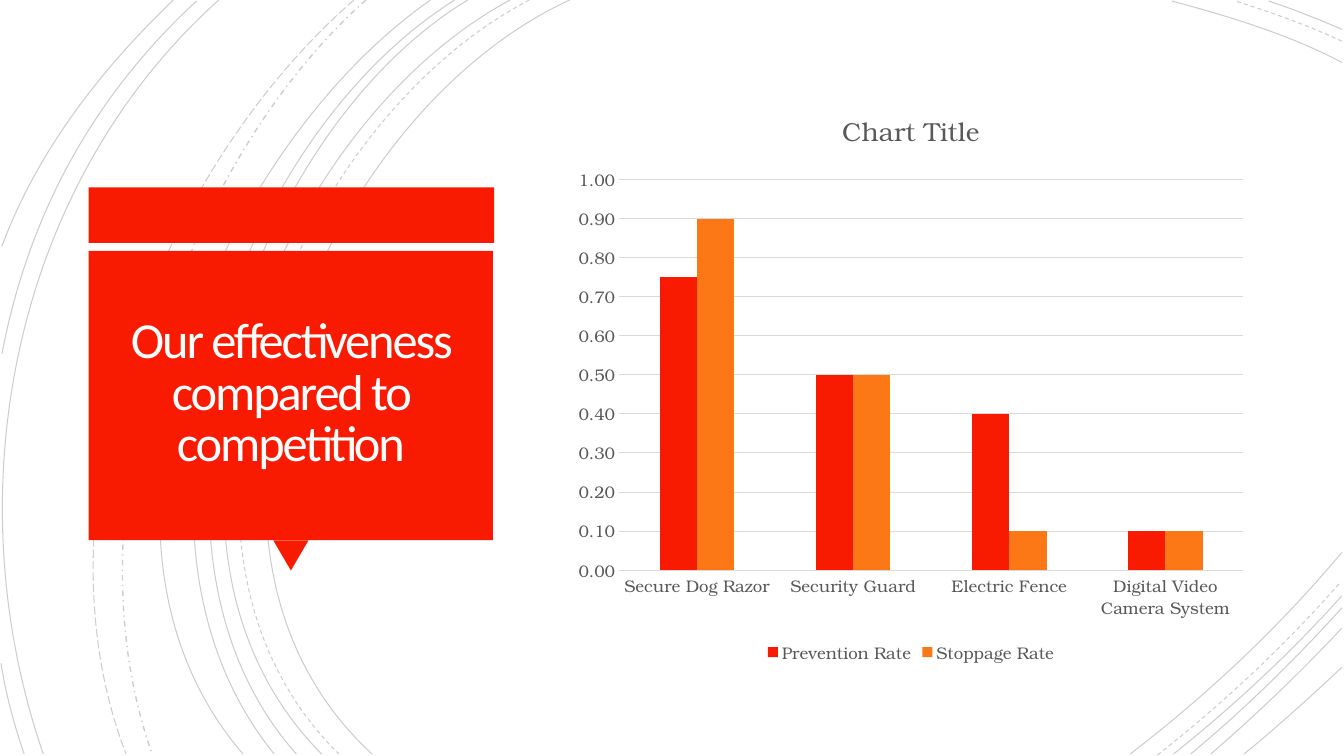
from dataclasses import dataclass

from lxml import etree
from pptx import Presentation
from pptx.chart.data import CategoryChartData
from pptx.dml.color import RGBColor
from pptx.enum.chart import XL_CHART_TYPE, XL_LEGEND_POSITION, XL_TICK_MARK
from pptx.enum.dml import MSO_LINE
from pptx.enum.shapes import MSO_SHAPE
from pptx.enum.text import MSO_ANCHOR, MSO_AUTO_SIZE, PP_ALIGN
from pptx.oxml.ns import qn
from pptx.util import Inches, Pt

COLUMNS = XL_CHART_TYPE.COLUMN_CLUSTERED
LEGEND_BOTTOM = XL_LEGEND_POSITION.BOTTOM
NO_TICKS = XL_TICK_MARK.NONE
SOLID, DASH = MSO_LINE.SOLID, MSO_LINE.DASH
DASH_DOT, LONG_DASH = MSO_LINE.DASH_DOT, MSO_LINE.LONG_DASH
RECTANGLE, TRIANGLE = MSO_SHAPE.RECTANGLE, MSO_SHAPE.ISOSCELES_TRIANGLE
MIDDLE, CENTER = MSO_ANCHOR.MIDDLE, PP_ALIGN.CENTER
NO_AUTOFIT = MSO_AUTO_SIZE.NONE


@dataclass(frozen=True)
class Theme:
    red: RGBColor = RGBColor(0xF8, 0x1B, 0x02)
    orange: RGBColor = RGBColor(0xFC, 0x77, 0x15)
    white: RGBColor = RGBColor(0xFF, 0xFE, 0xFF)
    black: RGBColor = RGBColor(0, 0, 0)
    gray: RGBColor = RGBColor(0x59, 0x59, 0x59)
    grid: RGBColor = RGBColor(0xD9, 0xD9, 0xD9)
    title_font: str = "Calibri"
    chart_font: str = "TeX Gyre Bonum"
    title_size: Pt = Pt(36)
    chart_title_size: Pt = Pt(18.6)
    chart_size: Pt = Pt(12)
    thin: Pt = Pt(0.75)


theme = Theme()


def style_font(font, name, size, color):
    font.name, font.size = name, size
    font.color.rgb = color


def add_curve(shapes, curve):
    """Draw one cubic curve from the x, y pairs of its four control points."""
    lengths = [Inches(value) for value in curve]
    start, *rest = zip(lengths[::2], lengths[1::2])
    builder = shapes.build_freeform(*start)
    builder.add_line_segments(rest, close=False)
    shape = builder.convert_to_shape()
    # Join the three straight segments into a single Bezier segment
    segments = list(shape._element.iter(qn("a:lnTo")))
    bezier = etree.SubElement(segments[0].getparent(), qn("a:cubicBezTo"))
    for segment in segments:
        bezier.append(segment[0])
        segment.getparent().remove(segment)
    return shape


deck = Presentation()
deck.slide_width, deck.slide_height = Inches(13.33), Inches(7.5)
page = deck.slides.add_slide(deck.slide_layouts[5])
shapes = page.shapes

# Background arcs: dash style, width, control points
arcs = [
    (SOLID, theme.thin, [
        (5.65, 0, 3.15, 1.15, 1.43, 5.4, 3.69, 7.48),
        (5.06, 0, 2.7, 1.27, 1.1, 5.37, 3.19, 7.48),
        (4.64, 0, 2.44, 1.33, 1.1, 5.41, 2.94, 7.48),
        (4.51, 0, 2.31, 1.38, 0.97, 5.33, 2.72, 7.48),
        (4.27, 0, 2.17, 1.47, 0.53, 5.29, 2.41, 7.48),
        (2.17, 0, 0.11, 1.85, -0.46, 4.9, 0.43, 7.48),
        (1.95, 0.01, 0.92, 0.96, 0.28, 2.14, 0.02, 3.51),
        (1.72, 0, 1, 0.69, 0.37, 1.5, 0.02, 2.44),
        (0.01, 6.58, 0.06, 6.89, 0.14, 7.19, 0.24, 7.48),
        (13.31, 0.62, 12.78, 0.34, 12.18, 0.16, 11.62, 0.01),
        (13.31, 0.29, 13.07, 0.19, 12.83, 0.09, 12.58, 0.01),
        (11.21, 7.48, 11.97, 6.9, 12.69, 6.22, 13.31, 5.48),
        (11.64, 7.48, 12.23, 7.01, 12.8, 6.48, 13.31, 5.91),
        (11.81, 7.48, 12.34, 7.04, 12.84, 6.55, 13.31, 6.03),
        (12.01, 7.48, 12.46, 7.09, 12.9, 6.67, 13.31, 6.23),
        (12.34, 7.48, 12.67, 7.21, 12.99, 6.92, 13.31, 6.62),
    ]),
    (DASH, theme.thin, [
        (5.25, 0, 2.85, 1.25, 1.23, 5.37, 3.36, 7.48),
        (13.31, 0.41, 12.97, 0.25, 12.6, 0.12, 12.25, 0.01),
        (11.48, 7.49, 12.13, 6.98, 12.75, 6.4, 13.3, 5.77),
    ]),
    (DASH_DOT, Pt(1), [(3.63, 0, 1.76, 1.66, 0.65, 5.09, 1.51, 7.48)]),
    (LONG_DASH, theme.thin, [(3.51, 0, 1.57, 1.69, 0.29, 4.99, 1.25, 7.48)]),
]
for dash, width, curves in arcs:
    for curve in curves:
        arc = add_curve(shapes, curve)
        arc.shadow.inherit = False
        arc.fill.background()
        arc.line.width, arc.line.dash_style = width, dash
        arc.line.color.rgb = theme.black
        color = arc._element.spPr.find(f"{qn('a:ln')}//{qn('a:srgbClr')}")
        etree.SubElement(color, qn("a:alpha"), val="20000")

# Red callout: top band, pointer, panel
for kind, rotation, *bounds in [
    (RECTANGLE, 0, 0.88, 1.86, 4.02, 0.55),
    (TRIANGLE, 180, 2.71, 5.36, 0.35, 0.3),
    (RECTANGLE, 0, 0.88, 2.49, 4.01, 2.87),
]:
    block = shapes.add_shape(kind, *map(Inches, bounds))
    block.rotation = rotation
    block.shadow.inherit = False
    block.fill.solid()
    block.fill.fore_color.rgb = theme.red
    block.line.fill.background()

# Title, raised above the panel
title = shapes.title
shapes._spTree.append(title._element)
title.left, title.top, title.width, title.height = map(Inches, (0.97, 2.57, 3.83, 2.69))
box = title.text_frame
box.text = "Our effectiveness compared to competition"
box.word_wrap, box.auto_size, box.vertical_anchor = True, NO_AUTOFIT, MIDDLE
box.margin_left = box.margin_right = box.margin_top = box.margin_bottom = Inches(0.25)
para = box.paragraphs[0]
para.alignment, para.line_spacing = CENTER, 0.85
style_font(para.font, theme.title_font, theme.title_size, theme.white)
para.runs[0].font._element.set("spc", "-150")

# Column chart
data = CategoryChartData(number_format="0.00")
data.categories = ["Secure Dog Razor", "Security Guard", "Electric Fence",
                   "Digital Video Camera System"]
data.add_series("Prevention Rate", (0.75, 0.5, 0.4, 0.1))
data.add_series("Stoppage Rate", (0.9, 0.5, 0.1, 0.1))
chart = shapes.add_chart(COLUMNS, *map(Inches, (5.6, 0.88, 6.87, 5.74)), data).chart
style_font(chart.font, theme.chart_font, theme.chart_size, theme.gray)

chart.has_title = True
chart.chart_title.include_in_layout = False
heading = chart.chart_title.text_frame
heading.text = "Chart Title"
heading_font = heading.paragraphs[0].font
style_font(heading_font, theme.chart_font, theme.chart_title_size, theme.gray)
heading_font.bold = False

chart.has_legend = True
chart.legend.position = LEGEND_BOTTOM
chart.legend.include_in_layout = False

plot = chart.plots[0]
plot.gap_width, plot.overlap, plot.vary_by_categories = 219, 0, False
for series, color in zip(plot.series, (theme.red, theme.orange)):
    series.format.fill.solid()
    series.format.fill.fore_color.rgb = color
    series.invert_if_negative = False

# Axes
categories, values = chart.category_axis, chart.value_axis
for axis in (categories, values):
    axis.major_tick_mark = axis.minor_tick_mark = NO_TICKS
values.minimum_scale, values.maximum_scale, values.major_unit = 0, 1, 0.1
values.tick_labels.number_format = "0.00"
values.tick_labels.number_format_is_linked = False
values.format.line.fill.background()
for line in (categories.format.line, values.major_gridlines.format.line):
    line.color.rgb, line.width = theme.grid, theme.thin

deck.save("out.pptx")
